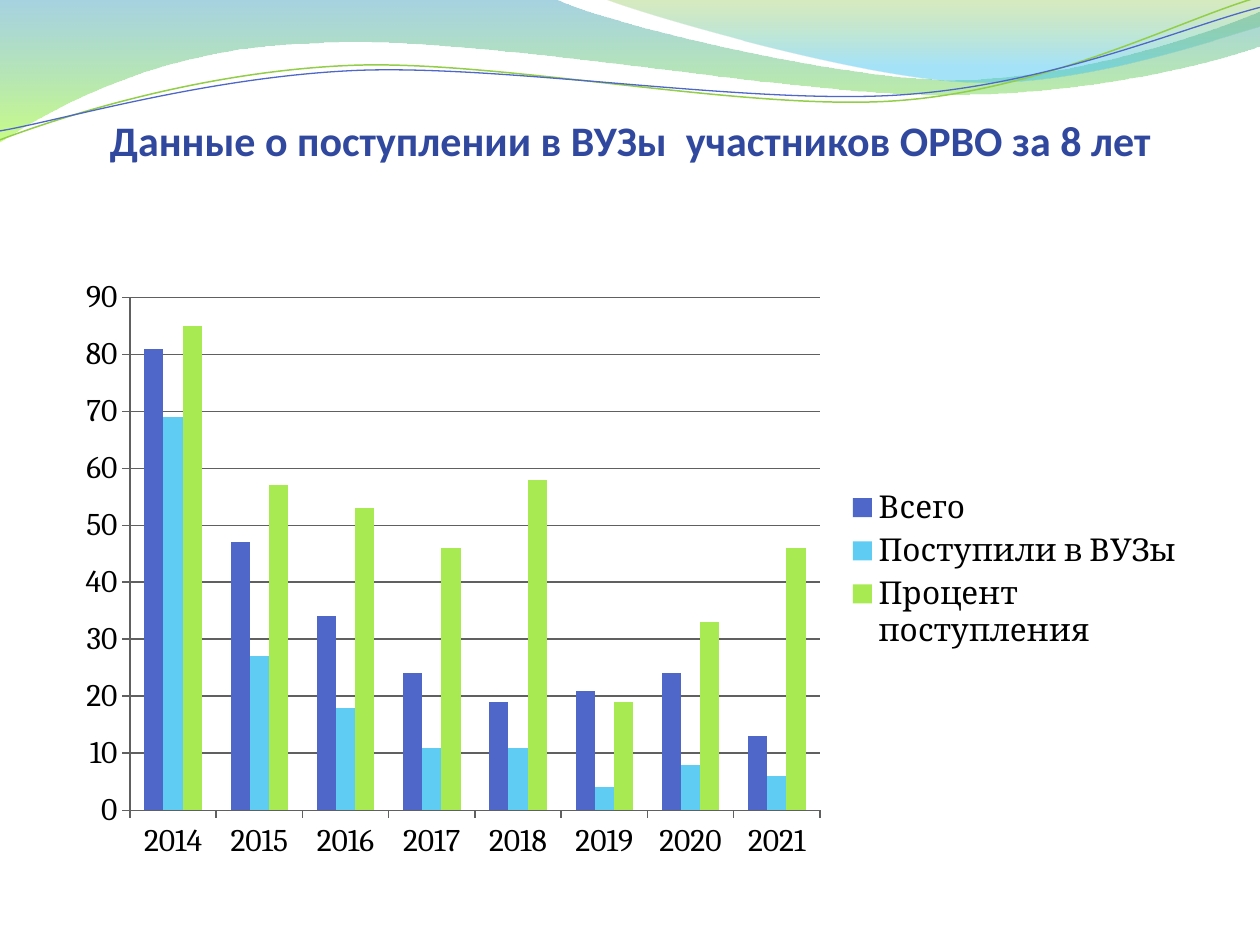
from collections import namedtuple

from lxml.etree import Element, SubElement
from pptx import Presentation
from pptx.chart.data import CategoryChartData
from pptx.dml.color import RGBColor
from pptx.enum.chart import XL_CHART_TYPE, XL_LEGEND_POSITION, XL_TICK_MARK
from pptx.enum.text import MSO_ANCHOR, PP_ALIGN
from pptx.oxml.ns import qn
from pptx.util import Cm, Pt

Box = namedtuple("Box", "left top width height")

BLUE = RGBColor(0x4E, 0x67, 0xC8)
SKY = RGBColor(0x5E, 0xCC, 0xF3)
LIME = RGBColor(0xA7, 0xEA, 0x52)
TITLE_BLUE = RGBColor(0x31, 0x48, 0x9F)
LINE_GREEN = RGBColor(0x93, 0xCE, 0x48)
TEAL = RGBColor(0x3B, 0x9C, 0xBF)
BRIGHT_GREEN = RGBColor(0x9C, 0xFA, 0x24)
OLIVE = RGBColor(0x7E, 0xBE, 0x2C)
CYAN = RGBColor(0x39, 0xC1, 0xF1)
GREY = RGBColor(0x60, 0x60, 0x60)
BLACK = RGBColor(0, 0, 0)

# Outlines in cm: a pair is a straight step, six numbers are a Bezier curve.
LEFT_WAVE = [
    (0, 0), (11.18, -0.03),
    (12.09, 0.43, 16.87, 1.6, 19.25, 1.6), (21.67, 1.6, 24.33, 0.66, 25.4, 0.23),
    (25.43, 0.91),
    (24.97, 1.12, 22.1, 1.93, 18.95, 1.91), (15.8, 1.91, 9.7, 0.71, 6.53, 0.86),
    (3.28, 0.91, 1.17, 2.11, -0.03, 2.87),
]
RIGHT_WAVE = [
    (12.17, -0.03),
    (12.93, 0.28, 17.32, 1.57, 19.53, 1.65), (21.74, 1.75, 24.41, 0.81, 25.4, 0.53),
    (25.4, 0),
]
GREEN_CURVE = [
    (0, 2.82),
    (1.22, 2.36, 4.01, 1.45, 7.04, 1.32), (10.03, 1.19, 15.06, 2.26, 18.11, 2.03),
    (21.16, 1.8, 23.83, 0.38, 25.35, -0.05),
]
BLUE_CURVE = [
    (0, 2.64),
    (1.19, 2.44, 4.17, 1.55, 7.19, 1.42), (10.24, 1.3, 15.16, 2.13, 18.21, 1.91),
    (21.23, 1.7, 23.9, 0.53, 25.4, 0.15),
]

YEARS = [str(year) for year in range(2014, 2022)]
SERIES = [
    ("Всего", BLUE, (81, 47, 34, 24, 19, 21, 24, 13)),
    ("Поступили в ВУЗы", SKY, (69, 27, 18, 11, 11, 4, 8, 6)),
    ("Процент поступления", LIME, (85, 57, 53, 46, 58, 19, 33, 46)),
]


def add_outline(page, box, outline, close):
    """Join the ends of the steps, then bend the curved steps."""
    ends = [(box.left + Cm(step[-2]), box.top + Cm(step[-1])) for step in outline]
    builder = page.shapes.build_freeform(*ends[0])
    builder.add_line_segments(ends[1:], close=close)
    shape = builder.convert_to_shape()
    shape.shadow.inherit = False
    segments = list(shape.element.spPr.iter(qn("a:lnTo")))
    for segment, step in zip(segments, outline[1:]):
        if len(step) == 6:
            segment.tag = qn("a:cubicBezTo")
            for index in (0, 1):
                x, y = step[2 * index:2 * index + 2]
                segment.insert(index, Element(
                    qn("a:pt"),
                    x=str(box.left + Cm(x) - shape.left),
                    y=str(box.top + Cm(y) - shape.top)))
    return shape


def add_wave(page, box, outline, stops):
    """Add a filled wave; stops are (position, colour, opacity in percent)."""
    wave = add_outline(page, box, outline, close=True)
    wave.line.fill.background()
    wave.fill.gradient()
    wave.fill.gradient_angle = 270
    for stop, (position, colour, _) in zip(wave.fill.gradient_stops, stops):
        stop.position = position
        stop.color.rgb = colour
    colours = list(wave.element.spPr.iter(qn("a:srgbClr")))
    for colour, (_, _, opacity) in zip(colours, stops):
        SubElement(colour, qn("a:alpha"), val=str(opacity * 1000))


def add_curve(page, box, outline, colour, width):
    curve = add_outline(page, box, outline, close=False)
    curve.fill.background()
    curve.line.color.rgb = colour
    curve.line.width = Pt(width)


def add_header(page, box):
    add_wave(page, box, LEFT_WAVE, [(0, TEAL, 45), (1, BRIGHT_GREEN, 55)])
    add_wave(page, box, RIGHT_WAVE, [(0, OLIVE, 30), (0.8, CYAN, 45)])
    add_curve(page, box, GREEN_CURVE, LINE_GREEN, 0.85)
    add_curve(page, box, BLUE_CURVE, BLUE, 0.75)


def add_title(page, box):
    frame = page.shapes.add_textbox(*box).text_frame
    frame.word_wrap = True
    frame.vertical_anchor = MSO_ANCHOR.BOTTOM
    frame.margin_left = frame.margin_right = frame.margin_bottom = 0
    para = frame.paragraphs[0]
    para.text = "Данные о поступлении в ВУЗы  участников ОРВО за 8 лет"
    para.alignment = PP_ALIGN.CENTER
    para.font.name = "Calibri"
    para.font.size = Pt(24)
    para.font.bold = True
    para.font.color.rgb = TITLE_BLUE


def add_admission_chart(page, box):
    data = CategoryChartData()
    data.categories = YEARS
    for name, _, values in SERIES:
        data.add_series(name, values)
    chart = page.shapes.add_chart(XL_CHART_TYPE.COLUMN_CLUSTERED, *box, data).chart
    chart.has_title = False
    chart.font.name = "Cambria"
    chart.font.size = Pt(18)
    chart.font.color.rgb = BLACK
    chart.has_legend = True
    chart.legend.position = XL_LEGEND_POSITION.RIGHT
    chart.legend.include_in_layout = False

    plot = chart.plots[0]
    plot.gap_width = 150
    plot.overlap = 0
    plot.vary_by_categories = False
    for series, (_, colour, _) in zip(plot.series, SERIES):
        series.format.fill.solid()
        series.format.fill.fore_color.rgb = colour

    for axis in (chart.category_axis, chart.value_axis):
        axis.major_tick_mark = XL_TICK_MARK.OUTSIDE
        axis.format.line.color.rgb = GREY
        axis.format.line.width = Pt(0.85)
    scale = chart.value_axis
    scale.minimum_scale, scale.maximum_scale, scale.major_unit = 0, 90, 10
    scale.has_major_gridlines = True
    scale.major_gridlines.format.line.color.rgb = GREY
    scale.major_gridlines.format.line.width = Pt(0.85)


def main():
    deck = Presentation()
    deck.slide_width, deck.slide_height = Cm(25.4), Cm(19.05)
    page = deck.slides.add_slide(deck.slide_layouts[6])
    add_header(page, Box(0, 0, deck.slide_width, Cm(2.87)))
    add_title(page, Box(Cm(1.09), Cm(2.13), Cm(23.24), Cm(1.19)))
    add_admission_chart(page, Box(Cm(1.27), Cm(5.38), Cm(22.86), Cm(12.19)))
    deck.save("out.pptx")


if __name__ == "__main__":
    main()
